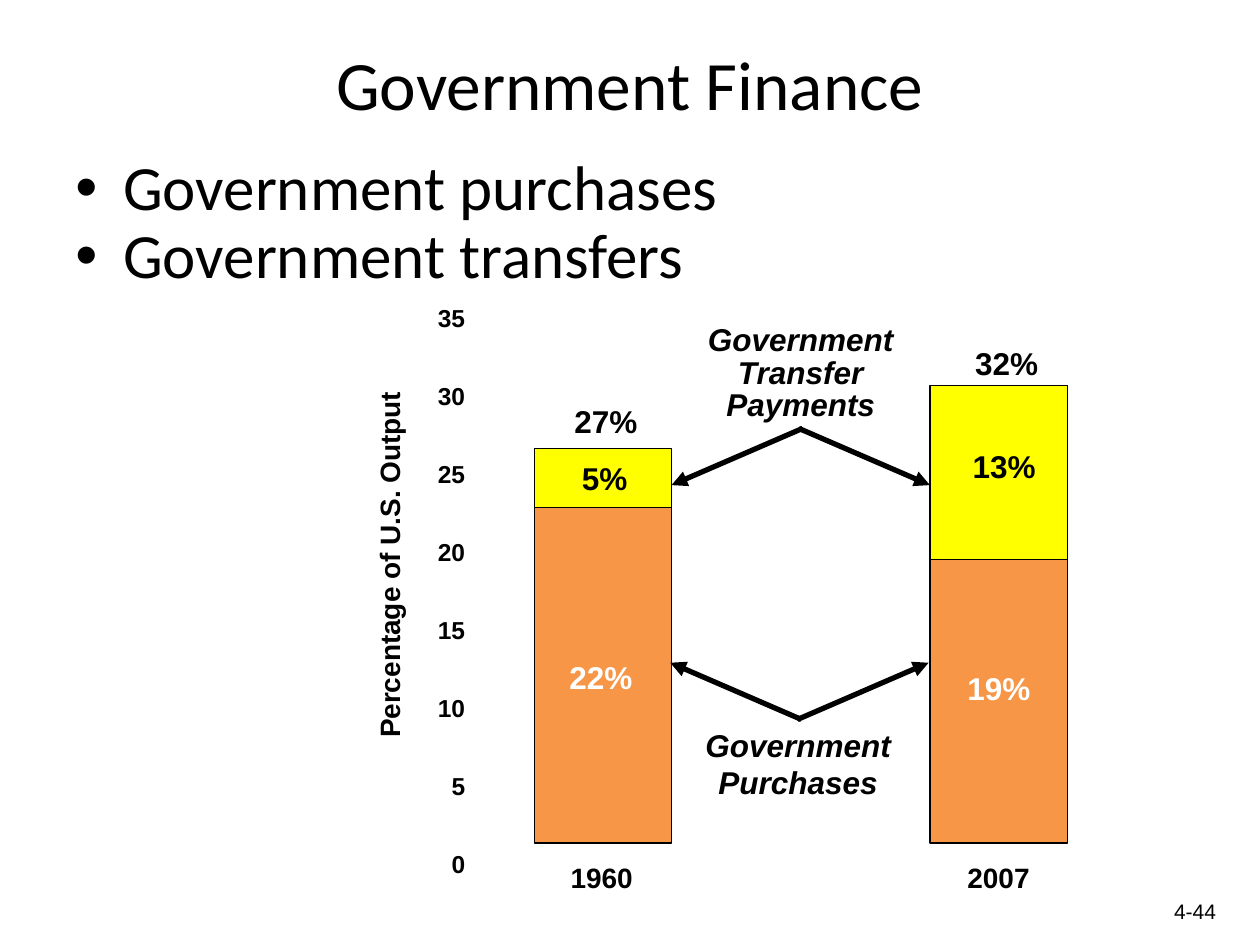
from dataclasses import dataclass

from lxml import etree
from pptx import Presentation
from pptx import util as u
from pptx.dml import color
from pptx.enum import shapes, text
from pptx.oxml import ns
from pptx.util import Inches

BLACK, WHITE, ORANGE, YELLOW = "000000", "FFFFFF", "F79646", "FFFF00"
LEFT, CENTER, RIGHT = text.PP_ALIGN.LEFT, text.PP_ALIGN.CENTER, text.PP_ALIGN.RIGHT
BAR_WIDTH = 1.09


@dataclass
class Label:
    """Lines of text with their frame in inches and their look."""
    lines: list[str]
    left: float
    top: float
    width: float
    height: float
    size: float = 18
    hue: str = BLACK
    font: str = "Arial"
    bold: bool = True
    italic: bool = False
    align: text.PP_ALIGN = LEFT
    spacing: float = 1.0
    gap: float = 0
    wrap: bool = False
    middle: bool = False
    bullet: bool = False
    rotation: float = 0


@dataclass
class Segment:
    """One coloured part of a stacked bar."""
    left: float
    top: float
    height: float
    hue: str


@dataclass
class Pointer:
    """One arrow from a series name to a bar."""
    start: tuple[float, float]
    end: tuple[float, float]


def rgb(value: str) -> color.RGBColor:
    """Turn a hex string into a colour."""
    return color.RGBColor.from_string(value)


def add_bullet(paragraph) -> None:
    """Give a paragraph a hanging round bullet."""
    properties = paragraph._p.get_or_add_pPr()
    properties.set("marL", str(Inches(0.38)))
    properties.set("indent", str(Inches(-0.38)))
    etree.SubElement(properties, ns.qn("a:buFont")).set("typeface", "Arial")
    etree.SubElement(properties, ns.qn("a:buChar")).set("char", "•")


def draw_label(slide, label: Label) -> None:
    """Draw a text box, one paragraph for each line."""
    box = slide.shapes.add_textbox(
        Inches(label.left), Inches(label.top), Inches(label.width), Inches(label.height))
    box.rotation = label.rotation
    frame = box.text_frame
    frame.word_wrap = label.wrap
    if not label.wrap:
        frame.auto_size = text.MSO_AUTO_SIZE.SHAPE_TO_FIT_TEXT
    frame.vertical_anchor = text.MSO_ANCHOR.MIDDLE if label.middle else text.MSO_ANCHOR.TOP
    for index, line in enumerate(label.lines):
        paragraph = frame.add_paragraph() if index else frame.paragraphs[0]
        paragraph.alignment = label.align
        paragraph.line_spacing = label.spacing
        paragraph.space_after = u.Pt(label.gap)
        if label.bullet:
            add_bullet(paragraph)
        run = paragraph.add_run()
        run.text = line
        run.font.name = label.font
        run.font.size = u.Pt(label.size)
        run.font.bold = label.bold
        run.font.italic = label.italic
        run.font.color.rgb = rgb(label.hue)


def draw_segment(slide, segment: Segment) -> None:
    """Draw one bar part with a thin outline."""
    bar = slide.shapes.add_shape(
        shapes.MSO_SHAPE.RECTANGLE, Inches(segment.left), Inches(segment.top),
        Inches(BAR_WIDTH), Inches(segment.height))
    bar.shadow.inherit = False
    bar.fill.solid()
    bar.fill.fore_color.rgb = rgb(segment.hue)
    bar.line.color.rgb = rgb(BLACK)
    bar.line.width = u.Pt(0.75)


def draw_pointer(slide, pointer: Pointer) -> None:
    """Draw a thick line that ends in a triangle."""
    arrow = slide.shapes.add_connector(
        shapes.MSO_CONNECTOR.STRAIGHT,
        *(Inches(value) for value in pointer.start + pointer.end))
    arrow.line.color.rgb = rgb(BLACK)
    arrow.line.width = u.Pt(3)
    etree.SubElement(arrow.line._get_or_add_ln(), ns.qn("a:tailEnd")).set("type", "triangle")
    etree.SubElement(arrow._element.spPr, ns.qn("a:effectLst"))


HEADINGS = [
    Label(["Government Finance"], 0.5, 0.3, 9, 0.71, 39.6, font="Calibri", bold=False,
          align=CENTER, wrap=True, middle=True),
    Label(["Government purchases", "Government transfers"], 0.5, 1.19, 9, 5.48, 36,
          font="Calibri", bold=False, spacing=0.9, wrap=True, bullet=True),
]
AXES = [
    Label([str(tick) for tick in range(35, -1, -5)], 3.27, 2.29, 0.52, 4.63, 14,
          align=RIGHT, spacing=1.3, gap=22.7),
    Label(["Percentage of U.S. Output"], 1.61, 4.29, 2.96, 0.37, 16, rotation=270),
    Label(["1960"], 4.43, 6.78, 0.69, 0.37, 16),
    Label(["2007"], 7.58, 6.78, 0.7, 0.37, 16),
]
SEGMENTS = [
    Segment(4.24, 4.02, 2.67, ORANGE),
    Segment(7.38, 4.44, 2.25, ORANGE),
    Segment(7.38, 3.06, 1.38, YELLOW),
    Segment(4.24, 3.56, 0.47, YELLOW),
]
SERIES_NAMES = [
    Label(["Government", "Purchases"], 5.5, 5.71, 1.67, 0.7, italic=True, align=CENTER),
    Label(["Government", "Transfer", "Payments"], 5.52, 2.54, 1.67, 0.87,
          italic=True, align=CENTER, spacing=0.85),
]
POINTERS = [
    Pointer((apex + side * 0.015, start), (apex - side * 1.025, end))
    for apex, start, end in [(6.345, 5.71, 5.26), (6.355, 3.4, 3.85)]
    for side in (-1, 1)
]
VALUES = [
    Label(["22%"], 4.42, 5.17, 0.7, 0.4, hue=WHITE),
    Label(["5%"], 4.52, 3.59, 0.56, 0.4),
    Label(["19%"], 7.58, 5.26, 0.7, 0.4, hue=WHITE),
    Label(["13%"], 7.62, 3.5, 0.71, 0.4),
    Label(["27%"], 4.46, 3.14, 0.7, 0.4),
    Label(["32%"], 7.64, 2.68, 0.71, 0.4),
]
PAGE_NUMBER = Label(["4-44"], 7.42, 7.08, 2.33, 0.27, 12, bold=False, align=RIGHT, wrap=True)


def main() -> None:
    """Build the slide and save it."""
    deck = Presentation()
    deck.slide_width, deck.slide_height = Inches(10), Inches(7.5)
    slide = deck.slides.add_slide(deck.slide_layouts[6])
    for label in HEADINGS + AXES:
        draw_label(slide, label)
    for segment in SEGMENTS:
        draw_segment(slide, segment)
    for label in SERIES_NAMES:
        draw_label(slide, label)
    for pointer in POINTERS:
        draw_pointer(slide, pointer)
    for label in VALUES + [PAGE_NUMBER]:
        draw_label(slide, label)
    deck.save("out.pptx")


if __name__ == "__main__":
    main()
